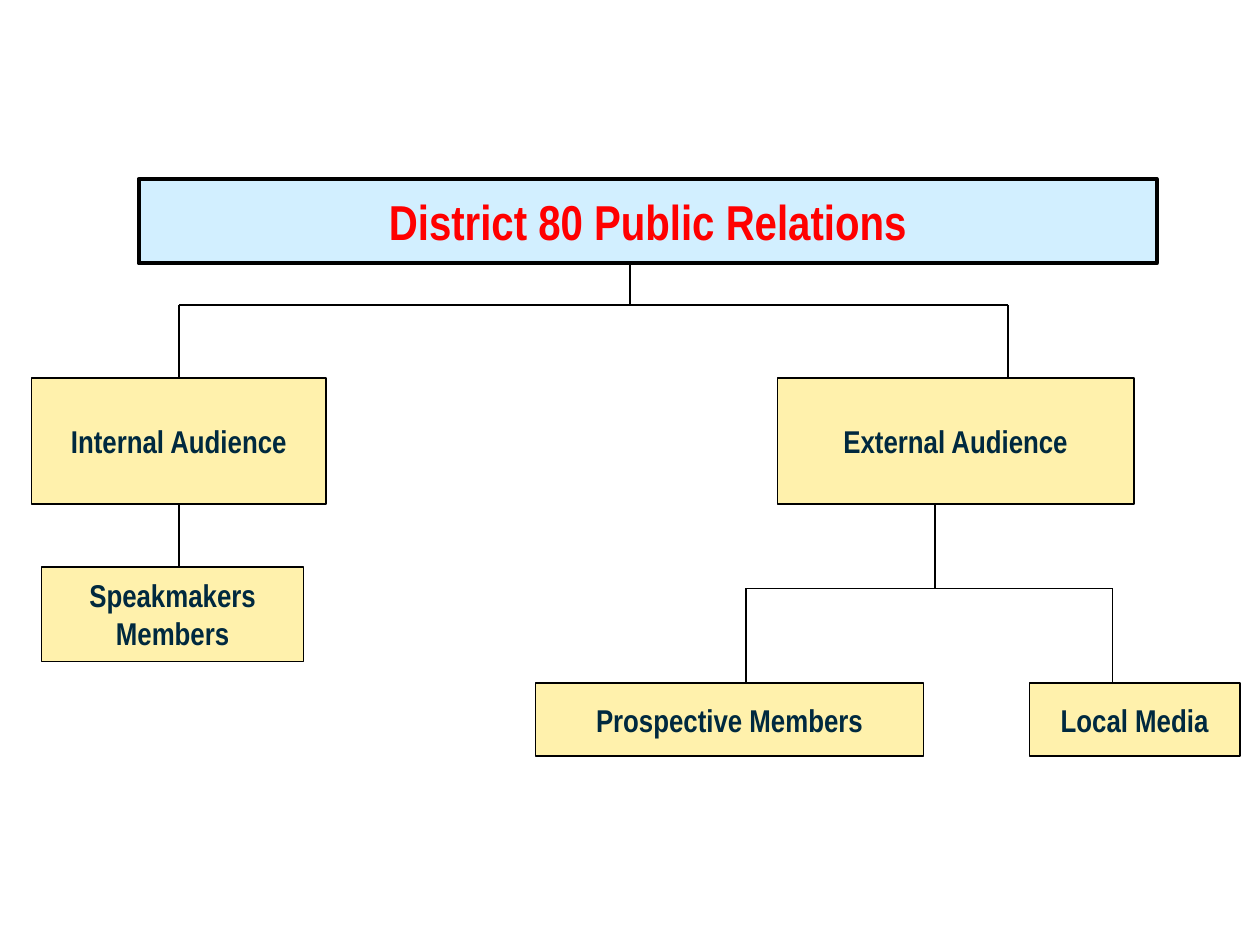
import pptx
import pptx.util
import pptx.dml.color
import pptx.enum.shapes
import pptx.enum.text
import pptx.oxml.ns
import lxml.etree

Inches, Pt = pptx.util.Inches, pptx.util.Pt
RGBColor = pptx.dml.color.RGBColor

BLACK = RGBColor(0, 0, 0)
RED = RGBColor(0xFF, 0, 0)
NAVY = RGBColor(0, 0x29, 0x3F)
SKY = RGBColor(0xD2, 0xEF, 0xFF)
CREAM = RGBColor(0xFF, 0xF1, 0xAC)
FONT = "Arial Narrow"

TITLE = "District 80 Public Relations"
TITLE_BOX = (1.1, 1.42, 8.08, 0.67)

# Rows of the chart, in inches from the top
TITLE_BOTTOM = 2.09
UPPER_BUS, AUDIENCE_TOP, AUDIENCE_BOTTOM = 2.42, 3, 4
MEMBERS_TOP, LOWER_BUS, OUTREACH_TOP = 4.5, 4.67, 5.42

# Columns where the connecting lines run
TRUNK, INTERNAL, EXTERNAL_IN, EXTERNAL_OUT = 5, 1.42, 8, 7.42
PROSPECTIVE, MEDIA = 5.92, 8.83

# text: left, top, width, height
BOXES = {
    "Internal Audience": (0.25, AUDIENCE_TOP, 2.34, 1),
    "External Audience": (6.17, AUDIENCE_TOP, 2.83, 1),
    "Speakmakers Members": (0.33, MEMBERS_TOP, 2.08, 0.75),
    "Prospective Members": (4.25, OUTREACH_TOP, 3.08, 0.58),
    "Local Media": (8.17, OUTREACH_TOP, 1.67, 0.58),
}

# x1, y1, x2, y2, then the box and side the line starts from, if joined
LINES = [
    (TRUNK, TITLE_BOTTOM, TRUNK, UPPER_BUS, None),
    (INTERNAL, UPPER_BUS, EXTERNAL_IN, UPPER_BUS, None),
    (INTERNAL, AUDIENCE_TOP, INTERNAL, UPPER_BUS, ("Internal Audience", 0)),
    (EXTERNAL_IN, UPPER_BUS, EXTERNAL_IN, AUDIENCE_TOP, None),
    (INTERNAL, AUDIENCE_BOTTOM, INTERNAL, MEMBERS_TOP, ("Internal Audience", 2)),
    (EXTERNAL_OUT, AUDIENCE_BOTTOM, EXTERNAL_OUT, LOWER_BUS, None),
    (PROSPECTIVE, LOWER_BUS, MEDIA, LOWER_BUS, None),
    (PROSPECTIVE, LOWER_BUS, PROSPECTIVE, OUTREACH_TOP, None),
    (MEDIA, LOWER_BUS, MEDIA, OUTREACH_TOP, None),
]


def style_box(sp, text, fill, line_width, size, color):
    sp.fill.solid()
    sp.fill.fore_color.rgb = fill
    sp.line.color.rgb = BLACK
    sp.line.width = Pt(line_width)
    tf = sp.text_frame
    tf.text = text
    tf.word_wrap = True
    tf.auto_size = pptx.enum.text.MSO_AUTO_SIZE.NONE
    tf.vertical_anchor = pptx.enum.text.MSO_ANCHOR.MIDDLE
    p = tf.paragraphs[0]
    p.alignment = pptx.enum.text.PP_ALIGN.CENTER
    p.font.name, p.font.size, p.font.bold = FONT, Pt(size), True
    p.font.color.rgb = color


def add_line(slide, ends, joint, boxes):
    cxn = slide.shapes.add_connector(
        pptx.enum.shapes.MSO_CONNECTOR.STRAIGHT, *map(Inches, ends))
    if joint:
        name, side = joint
        cxn.begin_connect(boxes[name], side)
    cxn.line.color.rgb = BLACK
    cxn.line.width = Pt(0.75)
    sp_pr = cxn._element.spPr
    lxml.etree.SubElement(sp_pr, pptx.oxml.ns.qn("a:effectLst"))


def main():
    prs = pptx.Presentation()
    prs.slide_width, prs.slide_height = Inches(10), Inches(7.5)
    slide = prs.slides.add_slide(prs.slide_layouts[5])

    title = slide.shapes.title
    title.left, title.top, title.width, title.height = map(Inches, TITLE_BOX)
    style_box(title, TITLE, SKY, 2.25, 28, RED)

    boxes = {}
    for text, place in BOXES.items():
        sp = slide.shapes.add_shape(
            pptx.enum.shapes.MSO_SHAPE.RECTANGLE, *map(Inches, place))
        sp.shadow.inherit = False
        style_box(sp, text, CREAM, 1, 18, NAVY)
        boxes[text] = sp

    for *ends, joint in LINES:
        add_line(slide, ends, joint, boxes)

    prs.save("out.pptx")


if __name__ == "__main__":
    main()
